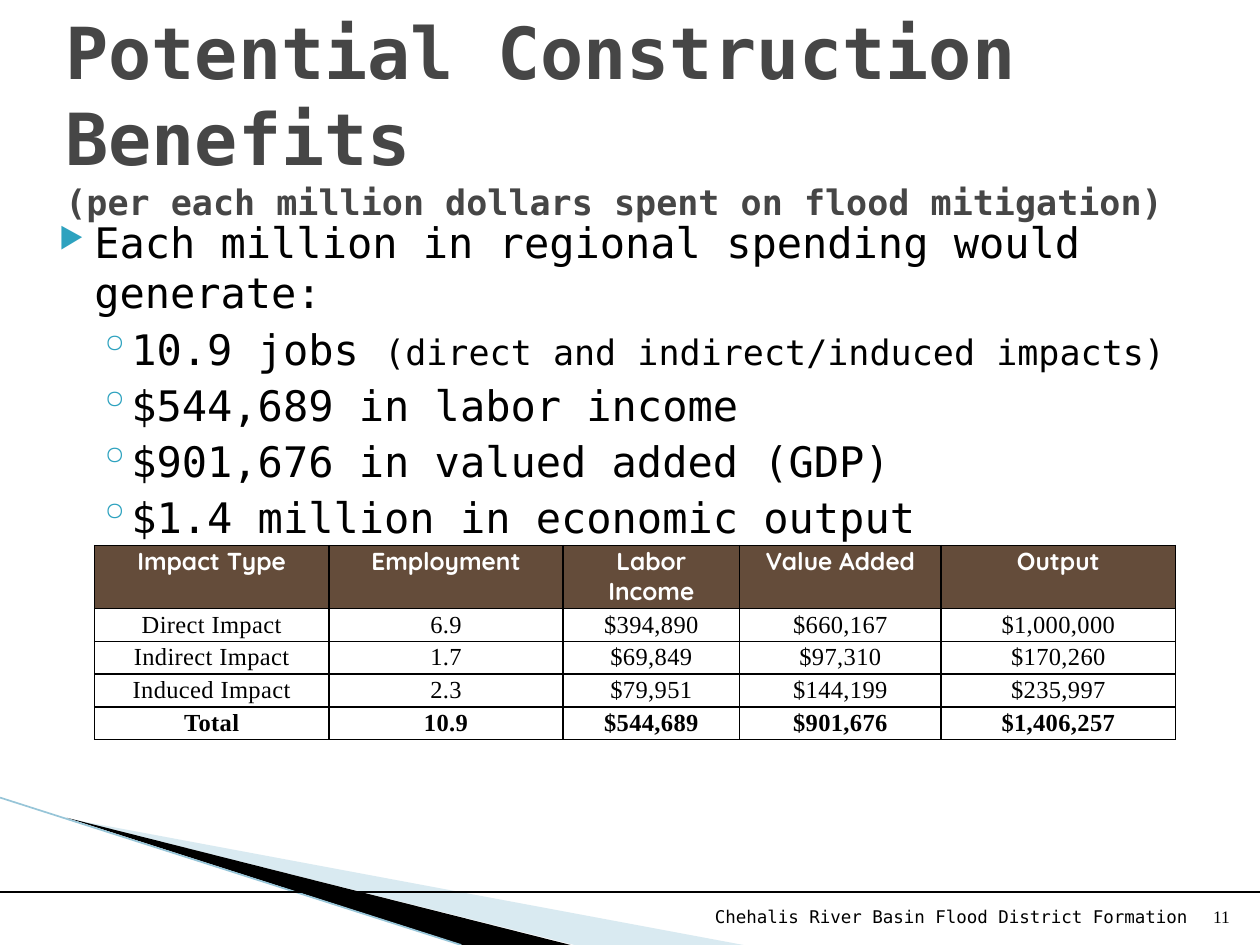
from lxml.etree import SubElement
from pptx import Presentation
from pptx.dml.color import RGBColor
from pptx.enum.shapes import MSO_CONNECTOR
from pptx.enum.text import MSO_ANCHOR, PP_ALIGN
from pptx.oxml.ns import qn
from pptx.util import Inches, Pt

THEME = {
    "mono": "DejaVu Sans Mono", "heading": "Quicksand", "serif": "Times New Roman",
    "title_color": "464646", "text": "000000", "white": "FFFFFF", "bullet": "2DA2BF",
    "header": "644C3A", "wave": "A0CBDC", "wave_line": "97C5D8",
    "title": 41, "body": 24, "note": 20, "table": 14, "footer": 10,
}

TITLE = ["Potential Construction Benefits", "(per each million dollars spent on flood mitigation)"]
BULLETS = [
    (0, ["Each million in regional spending would generate:"]),
    (1, ["10.9 jobs ", "(direct and indirect/induced impacts)"]),
    (1, ["$544,689 in labor income"]),
    (1, ["$901,676 in valued added (GDP)"]),
    (1, ["$1.4 million in economic output"]),
]
BULLET_LEVELS = [
    {"mark": "▶", "scale": 68, "margin": 0.4, "indent": -0.28, "before": 4},
    {"mark": "◦", "scale": 100, "margin": 0.68, "indent": -0.25, "before": 3.2},
]
IMPACTS = [
    ["Impact Type", "Employment", "Labor Income", "Value Added", "Output"],
    ["Direct Impact", "6.9", "$394,890", "$660,167", "$1,000,000"],
    ["Indirect Impact", "1.7", "$69,849", "$97,310", "$170,260"],
    ["Induced Impact", "2.3", "$79,951", "$144,199", "$235,997"],
    ["Total", "10.9", "$544,689", "$901,676", "$1,406,257"],
]
COLUMN_WIDTHS = [1.86, 1.86, 1.4, 1.6, 1.86]
ROW_HEIGHTS = [0.5] + [0.26] * 4
FOOTERS = [
    ("Chehalis River Basin Flood District Formation", "mono", (4.08, 7.01, 5.44, 0.4)),
    ("11", "serif", (9.46, 7.01, 0.4, 0.4)),
]
WAVES = [
    ([(0.55, 6.5), (5.9, 7.5), (4.56, 7.5)], "wave", 40),
    ([(0.53, 6.49), (4.53, 7.5), (3.67, 7.5)], "text", 100),
]
LINES = [
    ((0, 6.33), (3.66, 7.5), "wave_line", 0.95),
    ((0, 7.08), (10, 7.08), "text", 0.75),
]


def color(name):
    return RGBColor.from_string(THEME[name])


def add_text(paragraph, text, size="body", font="mono", fill="text", bold=False, spacing=None):
    run = paragraph.add_run()
    run.text = text
    run.font.size = Pt(THEME[size])
    run.font.name = THEME[font]
    run.font.bold = bold
    run.font.color.rgb = color(fill)
    if spacing:
        run.font._element.set("spc", str(round(spacing * 100)))


def add_box(slide, area, anchor):
    frame = slide.shapes.add_textbox(*map(Inches, area)).text_frame
    frame.word_wrap = True
    frame.vertical_anchor = anchor
    return frame


def add_bullet(paragraph, mark, scale, margin, indent):
    properties = paragraph._p.get_or_add_pPr()
    properties.set("marL", str(Inches(margin)))
    properties.set("indent", str(Inches(indent)))
    bullet_color = SubElement(properties, qn("a:buClr"))
    SubElement(bullet_color, qn("a:srgbClr"), val=THEME["bullet"])
    SubElement(properties, qn("a:buSzPct"), val=str(scale * 1000))
    SubElement(properties, qn("a:buChar"), char=mark)


def add_wave(slide, points, fill, opacity):
    corners = [(Inches(x), Inches(y)) for x, y in points]
    builder = slide.shapes.build_freeform(*corners[0])
    builder.add_line_segments(corners[1:], close=True)
    shape = builder.convert_to_shape()
    shape.shadow.inherit = False
    shape.fill.solid()
    shape.fill.fore_color.rgb = color(fill)
    shape.line.fill.background()
    if opacity < 100:
        for value in shape._element.spPr.iter(qn("a:srgbClr")):
            SubElement(value, qn("a:alpha"), val=str(opacity * 1000))


def add_line(slide, start, end, stroke, width):
    points = map(Inches, start + end)
    connector = slide.shapes.add_connector(MSO_CONNECTOR.STRAIGHT, *points)
    connector.line.color.rgb = color(stroke)
    connector.line.width = Pt(width)
    SubElement(connector._element.spPr, qn("a:effectLst"))


def add_borders(cell):
    properties = cell._tc.get_or_add_tcPr()
    for side in ("a:lnL", "a:lnR", "a:lnT", "a:lnB"):
        border = SubElement(properties, qn(side), w=str(Pt(1)))
        fill = SubElement(border, qn("a:solidFill"))
        SubElement(fill, qn("a:srgbClr"), val=THEME["text"])


def fill_cell(cell, text, is_header, is_total):
    cell.margin_left = cell.margin_right = Inches(0.07)
    cell.margin_top = cell.margin_bottom = 0
    cell.vertical_anchor = MSO_ANCHOR.TOP if is_header else MSO_ANCHOR.MIDDLE
    add_borders(cell)
    cell.fill.solid()
    cell.fill.fore_color.rgb = color("header" if is_header else "white")
    paragraph = cell.text_frame.paragraphs[0]
    paragraph.alignment = PP_ALIGN.CENTER
    add_text(paragraph, text, size="table", font="heading" if is_header else "serif",
             fill="white" if is_header else "text", bold=is_header or is_total,
             spacing=None if is_header else 0.2)


def add_impact_table(slide):
    table = slide.shapes.add_table(
        len(IMPACTS), len(COLUMN_WIDTHS), Inches(0.75), Inches(4.33),
        Inches(sum(COLUMN_WIDTHS)), Inches(sum(ROW_HEIGHTS))).table
    for column, width in zip(table.columns, COLUMN_WIDTHS):
        column.width = Inches(width)
    for row, height in zip(table.rows, ROW_HEIGHTS):
        row.height = Inches(height)
    for row_index, values in enumerate(IMPACTS):
        for column_index, value in enumerate(values):
            fill_cell(table.cell(row_index, column_index), value,
                      row_index == 0, row_index == len(IMPACTS) - 1)


def add_bullets(slide):
    frame = add_box(slide, (0.25, 1.67, 9.33, 2.33), MSO_ANCHOR.TOP)
    for index, (level, parts) in enumerate(BULLETS):
        paragraph = frame.add_paragraph() if index else frame.paragraphs[0]
        style = dict(BULLET_LEVELS[level])
        before = style.pop("before")
        paragraph.level = level
        if index:
            paragraph.space_before = Pt(before)
        add_bullet(paragraph, **style)
        for part, size in zip(parts, ("body", "note")):
            add_text(paragraph, part, size=size)


def main():
    presentation = Presentation()
    presentation.slide_width, presentation.slide_height = Inches(10), Inches(7.5)
    slide = presentation.slides.add_slide(presentation.slide_layouts[6])
    for wave in WAVES:
        add_wave(slide, *wave)
    for line in LINES:
        add_line(slide, *line)

    title = add_box(slide, (0.42, 0.25, 9.42, 1.33), MSO_ANCHOR.MIDDLE).paragraphs[0]
    add_text(title, TITLE[0], size="title", fill="title_color", bold=True)
    title.add_line_break()
    add_text(title, TITLE[1], size="note", fill="title_color", bold=True)

    for text, font, area in FOOTERS:
        footer = add_box(slide, area, MSO_ANCHOR.BOTTOM).paragraphs[0]
        footer.alignment = PP_ALIGN.RIGHT
        add_text(footer, text, size="footer", font=font)
    add_impact_table(slide)
    add_bullets(slide)
    presentation.save("out.pptx")


if __name__ == "__main__":
    main()
